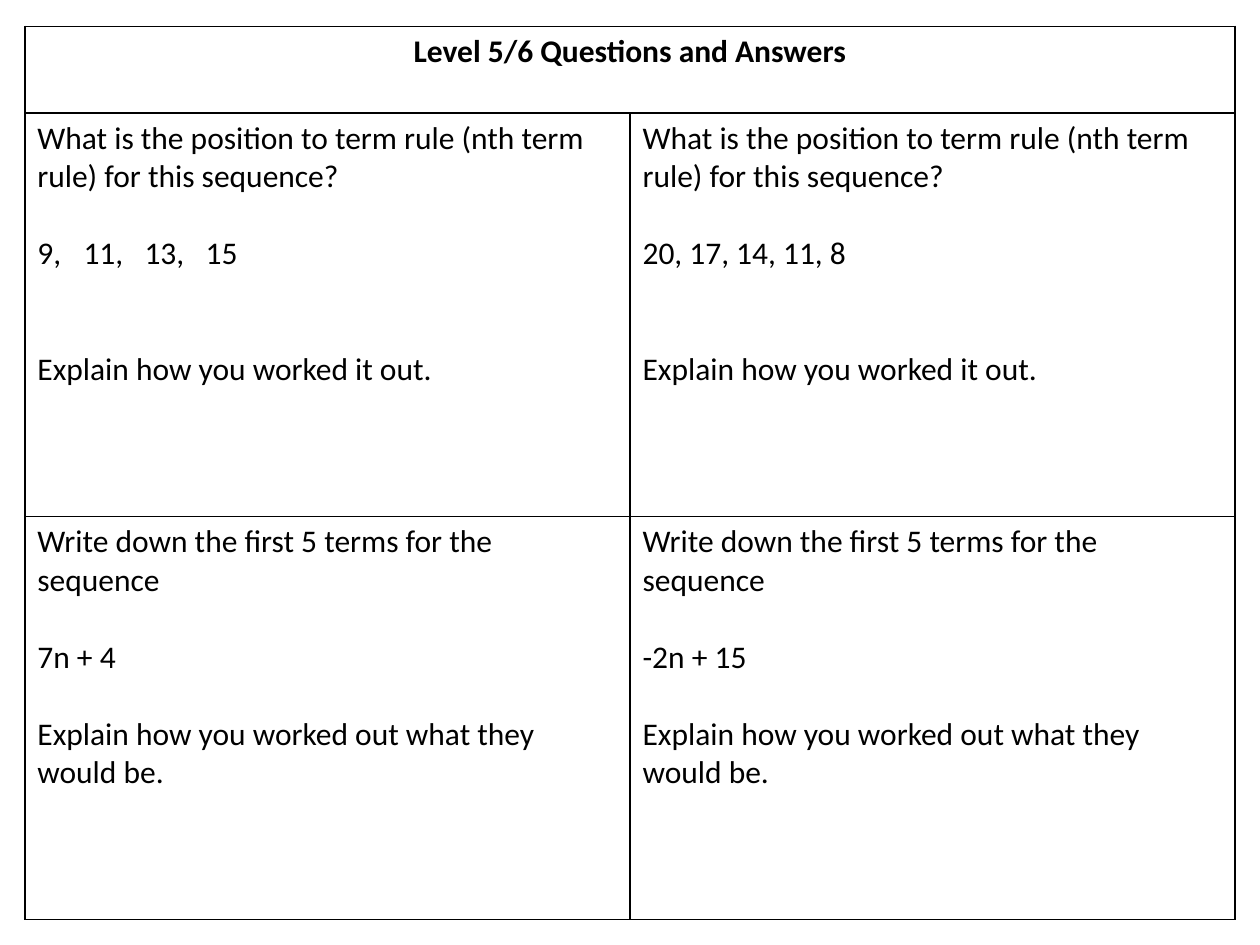
"""Build a one-slide worksheet of sequence questions."""
import pptx
import pptx.dml.color
import pptx.enum.text
import pptx.oxml
import pptx.oxml.ns
import pptx.util
from pptx.util import Cm

BLACK = pptx.dml.color.RGBColor(0, 0, 0)
WHITE = pptx.dml.color.RGBColor(255, 255, 255)
LINE = 22
NTH = "What is the position to term rule (nth term rule) for this sequence?"
HOW = "Explain how you worked it out."
TERMS = "Write down the first 5 terms for the sequence"
WHY = "Explain how you worked out what they would be."
CARDS = [
    [[(NTH, 0), ("9,\t11,\t13,\t15", 1), (HOW, 2)],
     [(NTH, 0), ("20, 17, 14, 11, 8", 1), (HOW, 2)]],
    [[(TERMS, 0), ("7n + 4", 1), (WHY, 1)],
     [(TERMS, 0), ("-2n + 15", 1), (WHY, 1)]],
]
STOPS = [Cm(0.93 + 1.23 * n) for n in range(3)]


class Sheet:
    """Holds the text style and the current slide."""

    def __init__(self, slide, font="Calibri", size=18):
        self.slide, self.font, self.size = slide, font, size

    def grid(self, left, top, wide, highs):
        shape = self.slide.shapes.add_table(
            len(highs), 2, left, top, wide * 2, sum(highs))
        table = shape.table
        table.first_row = table.horz_banding = False
        for col in table.columns:
            col.width = wide
        for row, high in zip(table.rows, highs):
            row.height = high
        for cell in table.iter_cells():
            self.frame(cell)
        return table

    def frame(self, cell):
        cell.fill.solid()
        cell.fill.fore_color.rgb = WHITE
        props = cell._tc.get_or_add_tcPr()
        for spot, side in enumerate("LRTB"):
            props.insert(spot, pptx.oxml.parse_xml(
                f'<a:ln{side} {pptx.oxml.ns.nsdecls("a")} w="12700">'
                f'<a:solidFill><a:srgbClr val="{BLACK}"/></a:solidFill>'
                f'</a:ln{side}>'))

    def text(self, cell, lines, bold=False, align=None):
        frame = cell.text_frame
        for spot, (words, gap) in enumerate(lines):
            para = frame.add_paragraph() if spot else frame.paragraphs[0]
            para.alignment = align
            para.space_before = pptx.util.Pt(gap * LINE)
            if "\t" in words:
                self.tabs(para)
            run = para.add_run()
            run.text = words
            run.font.name, run.font.bold = self.font, bold
            run.font.size = pptx.util.Pt(self.size)
            run.font.color.rgb = BLACK

    def tabs(self, para):
        stops = "".join(f'<a:tab pos="{int(pos)}" algn="l"/>' for pos in STOPS)
        para._p.get_or_add_pPr().append(pptx.oxml.parse_xml(
            f'<a:tabLst {pptx.oxml.ns.nsdecls("a")}>{stops}</a:tabLst>'))


def main():
    deck = pptx.Presentation()
    deck.slide_width, deck.slide_height = Cm(25.4), Cm(19.05)
    sheet = Sheet(deck.slides.add_slide(deck.slide_layouts[6]))
    table = sheet.grid(Cm(0.5), Cm(0.53), Cm(12.2),
                       [Cm(1.75), Cm(8.13), Cm(8.13)])
    head = table.cell(0, 0)
    head.merge(table.cell(0, 1))
    sheet.text(head, [("Level 5/6 Questions and Answers", 0)], True,
               pptx.enum.text.PP_ALIGN.CENTER)
    for row, cards in enumerate(CARDS, 1):
        for col, lines in enumerate(cards):
            sheet.text(table.cell(row, col), lines)
    deck.save("out.pptx")


if __name__ == "__main__":
    main()
